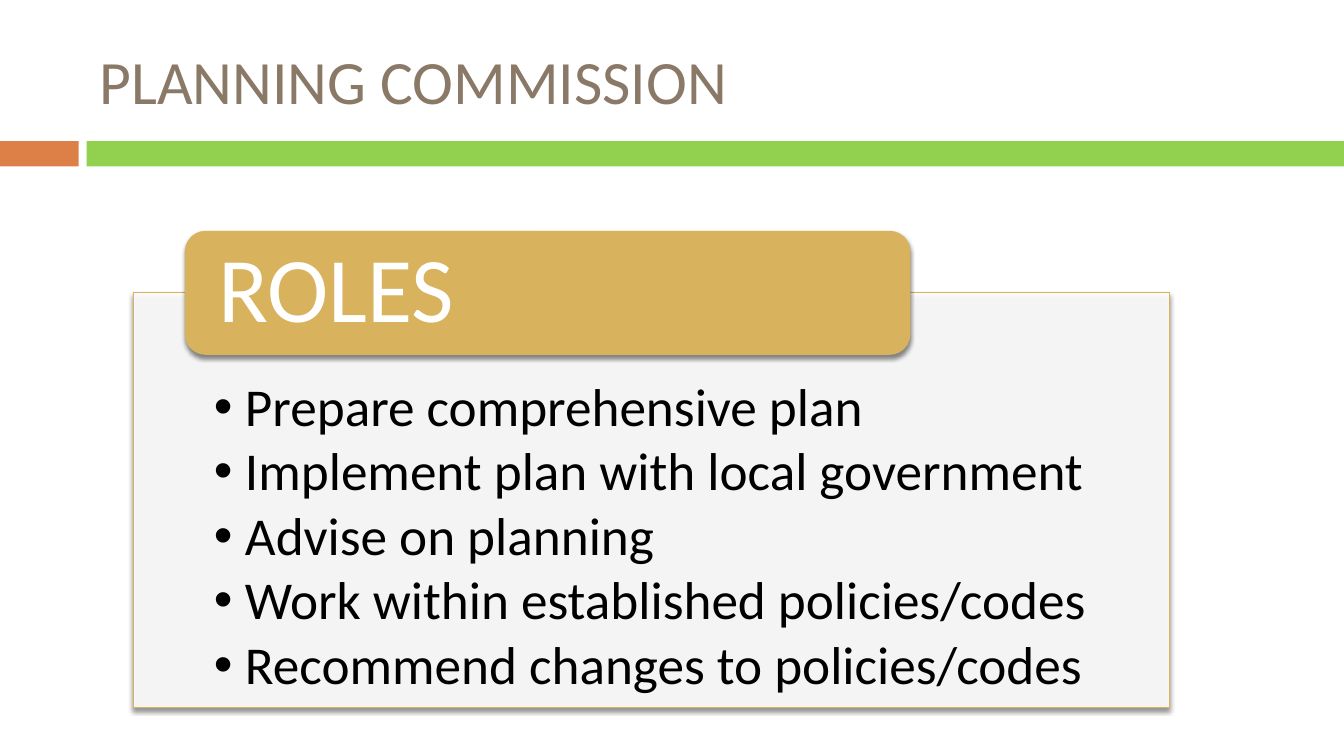
import pptx
import pptx.util
import pptx.dml.color
import pptx.enum.shapes
import pptx.enum.text
import pptx.oxml
import pptx.oxml.ns

Inches, Pt = pptx.util.Inches, pptx.util.Pt
RGBColor = pptx.dml.color.RGBColor
SHAPE = pptx.enum.shapes.MSO_SHAPE
ANCHOR = pptx.enum.text.MSO_ANCHOR
ALIGN = pptx.enum.text.PP_ALIGN

WHITE = RGBColor(0xFF, 0xFF, 0xFF)
BLACK = RGBColor(0, 0, 0)
BROWN = RGBColor(0x8A, 0x79, 0x67)
ORANGE = RGBColor(0xDD, 0x80, 0x47)
GREEN = RGBColor(0x92, 0xD0, 0x50)
GOLD = RGBColor(0xD8, 0xB2, 0x5C)

ROLES = [
    "Prepare comprehensive plan",
    "Implement plan with local government",
    "Advise on planning",
    "Work within established policies/codes",
    "Recommend changes to policies/codes",
]


def make(parent, *parts):
    """Append XML elements given as (tag, attributes) text to a parent."""
    ns = pptx.oxml.ns.nsdecls("a")
    for part in parts:
        tag, rest = part.split(" ", 1)
        parent.append(pptx.oxml.parse_xml(f"<a:{tag} {ns} {rest}"))


def block(slide, kind, left, top, width, height, fill):
    """Add a filled shape with no line and no shadow."""
    shape = slide.shapes.add_shape(
        kind, Inches(left), Inches(top), Inches(width), Inches(height))
    shape.shadow.inherit = False
    shape.fill.solid()
    shape.fill.fore_color.rgb = fill
    shape.line.fill.background()
    return shape


def shade(shape):
    """Give a shape a soft shadow just below it."""
    effects = shape._element.spPr.find(pptx.oxml.ns.qn("a:effectLst"))
    make(effects, 'outerShdw blurRad="38100" dist="30480" dir="5400000" '
         'rotWithShape="0"><a:srgbClr val="000000"><a:alpha val="45000"/>'
         '</a:srgbClr></a:outerShdw>')


def inset(frame, side, top, base):
    """Wrap a text frame and set its margins in inches."""
    frame.word_wrap = True
    frame.margin_left = frame.margin_right = Inches(side)
    frame.margin_top, frame.margin_bottom = Inches(top), Inches(base)


def style(para, size, color):
    """Set the font and left alignment of a paragraph."""
    para.alignment = ALIGN.LEFT
    para.font.name = "Calibri"
    para.font.size = Pt(size)
    para.font.color.rgb = color


def header(slide, left, top, width, height):
    """Place the title and the two-part colour band below it."""
    box = slide.shapes.add_textbox(
        Inches(left + 0.89), Inches(top), Inches(11.89), Inches(1.08))
    frame = box.text_frame
    inset(frame, 0.1, 0.05, 0.05)
    frame.vertical_anchor = ANCHOR.MIDDLE
    frame.text = "PLANNING COMMISSION"
    style(frame.paragraphs[0], 44, BROWN)
    band = 0.25
    y = top + height - band
    block(slide, SHAPE.RECTANGLE, left, y, 0.78, band, ORANGE)
    block(slide, SHAPE.RECTANGLE, left + 0.86, y, width - 0.86, band, GREEN)


def panel(slide, left, top, width, height):
    """Place the bulleted panel and the heading tab over its top edge."""
    tab = 1.23
    drop = tab / 2
    card = block(slide, SHAPE.RECTANGLE, left, top + drop, width,
                 height - drop, WHITE)
    color = card._element.spPr.find(
        pptx.oxml.ns.qn("a:solidFill")).find(pptx.oxml.ns.qn("a:srgbClr"))
    make(color, 'alpha val="90000"/>')
    card.line.color.rgb = GOLD
    card.line.width = Pt(0.79)
    shade(card)
    frame = card.text_frame
    inset(frame, 0.8, 0.87, 0.3)
    frame.vertical_anchor = ANCHOR.TOP
    frame.text = "\n".join(ROLES)
    for para in frame.paragraphs:
        para.level = 1
        para.line_spacing = 0.9
        para.space_after = Pt(5)
        props = para._p.get_or_add_pPr()
        props.set("marL", str(Inches(0.31)))
        props.set("indent", str(-Inches(0.31)))
        make(props, 'buFont typeface="Arial"/>', 'buChar char="•"/>')
        style(para, 38, BLACK)

    head = block(slide, SHAPE.ROUNDED_RECTANGLE, left + width * 0.05, top,
                 width * 0.7, tab, GOLD)
    shade(head)
    frame = head.text_frame
    inset(frame, 0.27, 0, 0)
    frame.vertical_anchor = ANCHOR.MIDDLE
    frame.text = "ROLES"
    frame.paragraphs[0].line_spacing = 0.9
    style(frame.paragraphs[0], 66, WHITE)


def main():
    """Build the slide and save it."""
    deck = pptx.Presentation()
    deck.slide_width, deck.slide_height = Inches(13.33), Inches(7.5)
    slide = deck.slides.add_slide(deck.slide_layouts[6])
    header(slide, 0, 0.25, 13.33, 1.4)
    panel(slide, 1.32, 2.29, 10.28, 4.73)
    deck.save("out.pptx")


if __name__ == "__main__":
    main()
